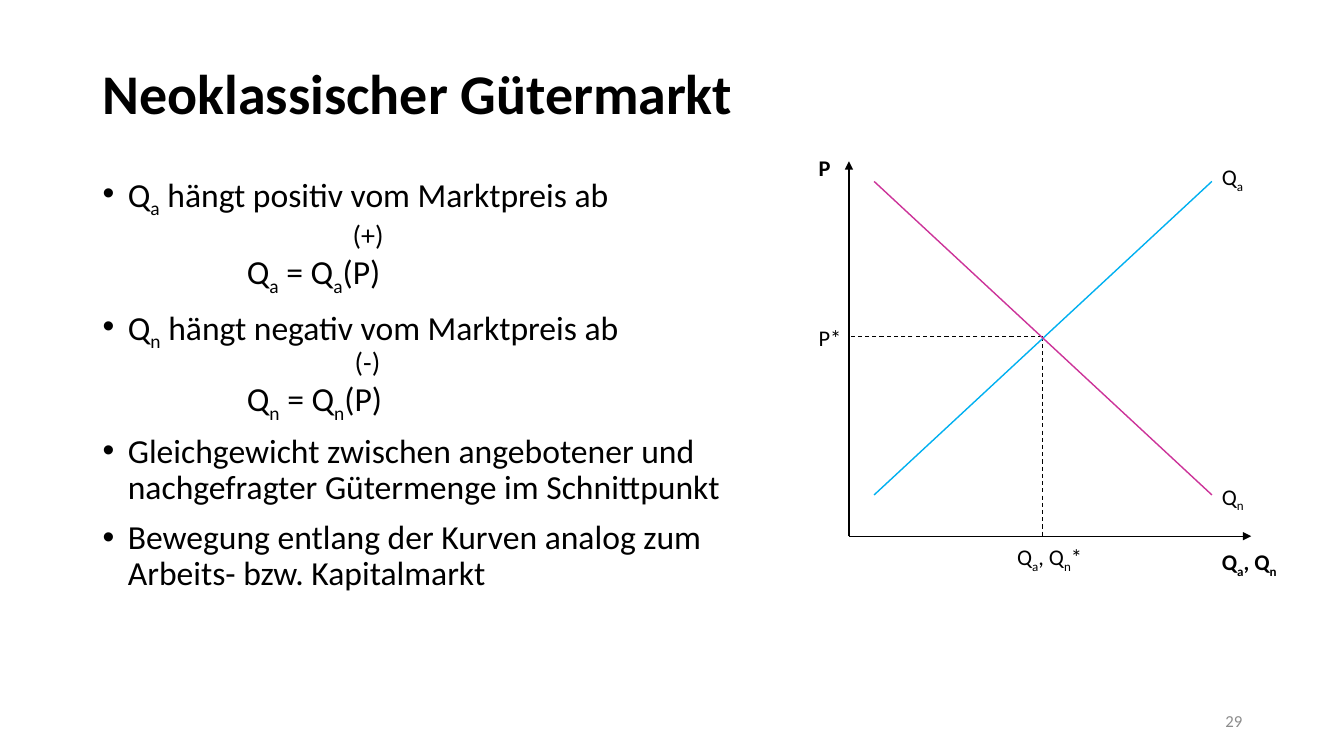
from lxml.etree import SubElement
from pptx import Presentation
from pptx.dml.color import RGBColor
from pptx.enum.dml import MSO_LINE
from pptx.enum.shapes import MSO_CONNECTOR
from pptx.enum.text import MSO_ANCHOR, PP_ALIGN
from pptx.oxml.ns import qn
from pptx.util import Inches, Pt

FONT = "Calibri"
BLACK = "000000"

TITLE = "Neoklassischer Gütermarkt"
PAGE = "29"

BULLET = dict(left=0.25, before=10, bullet=True)
EQUATION = dict(left=1.43)
PLUS = dict(left=2.48, size=20, before=4.4)
MINUS = dict(left=2.5, size=20)
BODY = [
    ("Q_a hängt positiv vom Marktpreis ab", BULLET),
    ("(+)", PLUS),
    ("Q_a = Q_a(P)", EQUATION),
    ("Q_n hängt negativ vom Marktpreis ab", BULLET),
    ("(-)", MINUS),
    ("Q_n = Q_n(P)", EQUATION),
    ("Gleichgewicht zwischen angebotener und nachgefragter Gütermenge im Schnittpunkt", BULLET),
    ("Bewegung entlang der Kurven analog zum Arbeits- bzw. Kapitalmarkt", BULLET),
]

ORIGIN_X, ORIGIN_Y = 8.42, 5.32
AXIS_TOP, AXIS_RIGHT = 1.6, 12.41
CURVE_LEFT, CURVE_RIGHT = 8.67, 12.02
CURVE_TOP, CURVE_BOTTOM = 1.8, 4.91
PRICE, QUANTITY = 3.34, 10.34

AXIS = dict(arrow=True)
GUIDE = dict(width=0.75, dashed=True)
LINES = [
    ((ORIGIN_X, ORIGIN_Y), (ORIGIN_X, AXIS_TOP), AXIS),
    ((ORIGIN_X, ORIGIN_Y), (AXIS_RIGHT, ORIGIN_Y), AXIS),
    ((QUANTITY, PRICE), (ORIGIN_X, PRICE), GUIDE),
    ((QUANTITY, PRICE), (QUANTITY, ORIGIN_Y), GUIDE),
    ((CURVE_LEFT, CURVE_BOTTOM), (CURVE_RIGHT, CURVE_TOP), dict(color="00B0F0")),
    ((CURVE_LEFT, CURVE_TOP), (CURVE_RIGHT, CURVE_BOTTOM), dict(color="CC3399")),
]

LABEL_HEIGHT = 0.37
LABELS = [
    ("P", 8.02, 1.48, 0.4, True),
    ("P*", 8.02, 3.17, 0.77, False),
    ("Q_a, Q_n*", 9.99, 5.34, 1.04, False),
    ("Q_a, Q_n", 12.02, 5.39, 0.79, True),
    ("Q_a", 12.02, 1.57, 1.04, False),
    ("Q_n", 12.02, 4.74, 1.04, False),
]


def rgb(color):
    return RGBColor.from_string(color)


def add_box(slide, left, top, width, height, anchor=MSO_ANCHOR.TOP, right_inset=0.1):
    box = slide.shapes.add_textbox(*map(Inches, (left, top, width, height)))
    frame = box.text_frame
    frame.word_wrap = True
    frame.vertical_anchor = anchor
    frame.margin_right = Inches(right_inset)
    return frame


def write(paragraph, text, size=24, color=BLACK, bold=False, align=PP_ALIGN.LEFT,
          spacing=1.0, before=0, left=0, bullet=False):
    properties = paragraph._p.get_or_add_pPr()
    properties.set("marL", str(Inches(left)))
    properties.set("indent", str(-Inches(left) if bullet else 0))
    if bullet:
        SubElement(properties, qn("a:buFont")).set("typeface", "Arial")
        SubElement(properties, qn("a:buChar")).set("char", "•")
    paragraph.alignment = align
    paragraph.line_spacing = spacing
    paragraph.space_before = Pt(before)

    def add_run(part, subscript=False):
        run = paragraph.add_run()
        run.text = part
        run.font.name = FONT
        run.font.size = Pt(size)
        run.font.bold = bold
        run.font.color.rgb = rgb(color)
        if subscript:
            run.font._element.set("baseline", "-25000")

    first, *rest = text.split("_")
    add_run(first)
    for part in rest:
        add_run(part[0], subscript=True)
        if part[1:]:
            add_run(part[1:])


def add_line(slide, start, end, color=BLACK, width=1, dashed=False, arrow=False):
    connector = slide.shapes.add_connector(MSO_CONNECTOR.STRAIGHT, *map(Inches, start + end))
    connector.line.color.rgb = rgb(color)
    connector.line.width = Pt(width)
    if dashed:
        connector.line.dash_style = MSO_LINE.DASH
    if arrow:
        SubElement(connector.line._get_or_add_ln(), qn("a:tailEnd")).set("type", "triangle")
    SubElement(connector._element.spPr, qn("a:effectLst"))


def main():
    deck = Presentation()
    deck.slide_width, deck.slide_height = Inches(13.33), Inches(7.5)
    slide = deck.slides.add_slide(deck.slide_layouts[6])

    title = add_box(slide, 0.92, 0.23, 11.5, 1.45, anchor=MSO_ANCHOR.MIDDLE)
    write(title.paragraphs[0], TITLE, size=40, bold=True, spacing=0.9)

    page = add_box(slide, 9.42, 6.95, 3, 0.4, anchor=MSO_ANCHOR.MIDDLE)
    write(page.paragraphs[0], PAGE, size=12, color="8C8C8C", align=PP_ALIGN.RIGHT)

    for start, end, style in LINES:
        add_line(slide, start, end, **style)

    body = add_box(slide, 0.92, 1.68, 11.5, 4.1, right_inset=4.9)
    for index, (text, style) in enumerate(BODY):
        paragraph = body.add_paragraph() if index else body.paragraphs[0]
        write(paragraph, text, spacing=0.9, **(style if index else {**style, "before": 0}))

    for text, left, top, width, bold in LABELS:
        label = add_box(slide, left, top, width, LABEL_HEIGHT)
        write(label.paragraphs[0], text, size=16, bold=bold)

    deck.save("out.pptx")


if __name__ == "__main__":
    main()
